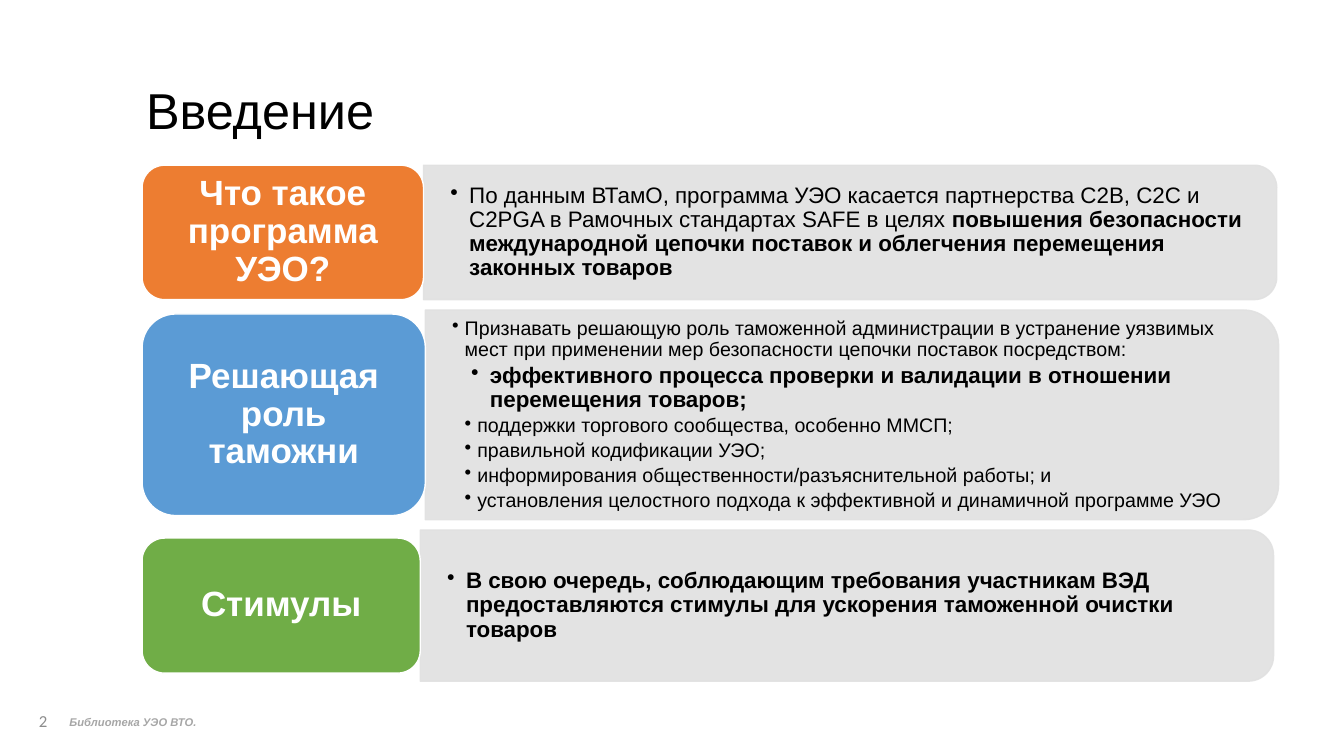
from lxml.etree import SubElement
from pptx import Presentation
from pptx.dml.color import RGBColor
from pptx.enum.shapes import MSO_SHAPE as Shape
from pptx.enum.text import MSO_ANCHOR as Anchor, PP_ALIGN as Align
from pptx.oxml.ns import qn
from pptx.util import Pt

# Content
TITLE = "Введение"
PAGE_NUMBER = "2"
FOOTER = "Библиотека УЭО ВТО."

BLACK = RGBColor(0x00, 0x00, 0x00)
WHITE = RGBColor(0xFF, 0xFF, 0xFF)
PANEL_GREY = RGBColor(0xE1, 0xE1, 0xE1)
NUMBER_GREY = RGBColor(0x8C, 0x8C, 0x8C)
FOOTER_GREY = RGBColor(0xA6, 0xA6, 0xA6)
ORANGE = RGBColor(0xED, 0x7D, 0x31)
BLUE = RGBColor(0x5B, 0x9B, 0xD5)
GREEN = RGBColor(0x70, 0xAD, 0x47)

# Bullets: level, size, [(text, bold), ...]
ROWS = [
    {"label": "Что такое программа УЭО?", "color": ORANGE,
     "label_size": (201, 96), "panel_height": 96,
     "bullets": [
         (1, 16, [("По данным ВТамО, программа УЭО касается партнерства C2B, C2C и "
                   "C2PGA в Рамочных стандартах SAFE в целях ", False),
                  ("повышения безопасности международной цепочки поставок и "
                   "облегчения перемещения законных товаров", True)]),
     ]},
    {"label": "Решающая роль таможни", "color": BLUE,
     "label_size": (202.3, 144), "panel_height": 149.8,
     "bullets": [
         (1, 14, [("Признавать решающую роль таможенной администрации в устранение "
                   "уязвимых мест при применении мер безопасности цепочки поставок "
                   "посредством:", False)]),
         (2, 16, [("эффективного процесса проверки и валидации в отношении "
                   "перемещения товаров;", True)]),
         (2, 14, [("поддержки торгового сообщества, особенно ММСП;", False)]),
         (2, 14, [("правильной кодификации УЭО;", False)]),
         (2, 14, [("информирования общественности/разъяснительной работы; и", False)]),
         (2, 14, [("установления целостного подхода к эффективной и динамичной "
                   "программе УЭО", False)]),
     ]},
    {"label": "Стимулы", "color": GREEN,
     "label_size": (198.7, 96.5), "panel_height": 108,
     "bullets": [
         (1, 16, [("В свою очередь, соблюдающим требования участникам ВЭД "
                   "предоставляются стимулы для ускорения таможенной очистки "
                   "товаров", True)]),
     ]},
]

# Layout in points
LEFT, TOP, GAP = 101.5, 118, 7.4
PANEL_WIDTH = 609.5
CORNER_INSET = 0.05  # share of the panel height taken by its round corners
HANG = {16: 13.5, 14: 9}


def set_font(font, size, color, name="Arial", bold=False, italic=False):
    font.name, font.size = name, Pt(size)
    font.bold, font.italic = bold, italic
    font.color.rgb = color


def add_text_box(page, left, top, width, height):
    box = page.shapes.add_textbox(Pt(left), Pt(top), Pt(width), Pt(height))
    frame = box.text_frame
    frame.word_wrap = True
    frame.vertical_anchor = Anchor.MIDDLE
    return frame


def add_line(page, area, text, size, color, **style):
    para = add_text_box(page, *area).paragraphs[0]
    para.text = text
    set_font(para.font, size, color, **style)
    return para


def add_block(page, kind, left, top, width, height, fill, line):
    block = page.shapes.add_shape(kind, Pt(left), Pt(top), Pt(width), Pt(height))
    block.shadow.inherit = False
    block.fill.solid()
    block.fill.fore_color.rgb = fill
    block.line.color.rgb = line
    block.line.width = Pt(1)
    return block


def add_panel(page, left, top, width, height):
    # Turned a quarter so that the round corners lie on the right
    panel = add_block(page, Shape.ROUND_2_SAME_RECTANGLE,
                      left + (width - height) / 2, top + (height - width) / 2,
                      height, width, PANEL_GREY, PANEL_GREY)
    panel.rotation = 90
    for color in panel._element.spPr.iter(qn("a:srgbClr")):
        SubElement(color, qn("a:alpha"), val="90000")


def add_bullets(page, left, top, width, height, bullets):
    inset = CORNER_INSET * height
    frame = add_text_box(page, left, top + inset, width - inset, height - 2 * inset)
    frame.margin_left = frame.margin_right = Pt(19.2)
    frame.margin_top = frame.margin_bottom = Pt(9.6)
    for index, (level, size, spans) in enumerate(bullets):
        para = frame.add_paragraph() if index else frame.paragraphs[0]
        para.level = level
        props = para._p.get_or_add_pPr()
        props.set("marL", str(Pt(level * HANG[size])))
        props.set("indent", str(-Pt(HANG[size])))
        SubElement(props, qn("a:buChar"), char="•")
        para.line_spacing = 0.9
        para.space_after = Pt(2.5)
        set_font(para.font, size, BLACK)
        for text, bold in spans:
            span = para.add_run()
            span.text = text
            set_font(span.font, size, BLACK, bold=bold)


def add_label(page, left, top, width, height, text, color):
    label = add_block(page, Shape.ROUNDED_RECTANGLE, left, top, width, height,
                      color, WHITE)
    frame = label.text_frame
    frame.word_wrap = True
    frame.vertical_anchor = Anchor.MIDDLE
    para = frame.paragraphs[0]
    para.text = text
    para.alignment = Align.CENTER
    para.line_spacing = 0.9
    set_font(para.font, 25, WHITE, bold=True)


def main():
    deck = Presentation()
    deck.slide_width, deck.slide_height = Pt(960), Pt(540)
    page = deck.slides.add_slide(deck.slide_layouts[6])

    # Title and footer
    title = add_line(page, (97.2, 28.8, 706.3, 104.4), TITLE, 36, BLACK)
    title.line_spacing = 0.9
    number = add_line(page, (5, 500.4, 36, 28.8), PAGE_NUMBER, 12, NUMBER_GREY,
                      name="Calibri")
    number.alignment = Align.RIGHT
    footer = add_line(page, (42.5, 506.9, 155.5, 17.3), FOOTER, 8, FOOTER_GREY,
                      bold=True, italic=True)
    footer.space_after = Pt(6)

    # Rows: each label is centred on the panel to its right
    top = TOP
    for row in ROWS:
        label_width, label_height = row["label_size"]
        height = row["panel_height"]
        area = (LEFT + label_width, top, PANEL_WIDTH, height)
        add_panel(page, *area)
        add_bullets(page, *area, row["bullets"])
        add_label(page, LEFT, top + (height - label_height) / 2,
                  label_width, label_height, row["label"], row["color"])
        top += height + GAP

    deck.save("out.pptx")


if __name__ == "__main__":
    main()
